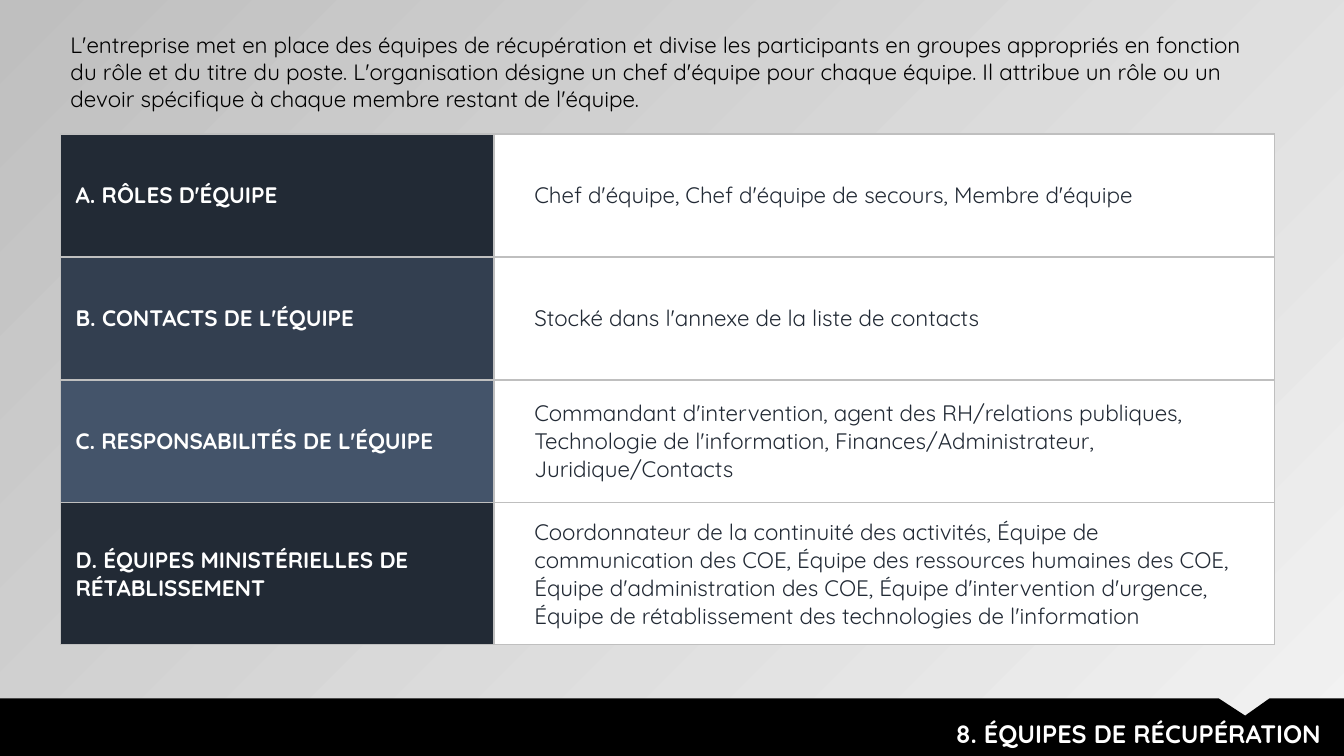
from dataclasses import dataclass

from lxml import etree
from pptx import Presentation
from pptx import util as u
from pptx.dml.color import RGBColor
from pptx.enum import text
from pptx.oxml import ns

TITLE = "8. ÉQUIPES DE RÉCUPÉRATION"
INTRO = (
    "L'entreprise met en place des équipes de récupération et divise les participants "
    "en groupes appropriés en fonction du rôle et du titre du poste. L'organisation "
    "désigne un chef d'équipe pour chaque équipe. Il attribue un rôle ou un devoir "
    "spécifique à chaque membre restant de l'équipe."
)
TEAMS = [
    ("A. RÔLES D'ÉQUIPE",
     "Chef d'équipe, Chef d'équipe de secours, Membre d'équipe"),
    ("B. CONTACTS DE L'ÉQUIPE",
     "Stocké dans l'annexe de la liste de contacts"),
    ("C. RESPONSABILITÉS DE L'ÉQUIPE",
     "Commandant d'intervention, agent des RH/relations publiques, Technologie de "
     "l'information, Finances/Administrateur, Juridique/Contacts"),
    ("D. ÉQUIPES MINISTÉRIELLES DE RÉTABLISSEMENT",
     "Coordonnateur de la continuité des activités, Équipe de communication des COE, "
     "Équipe des ressources humaines des COE, Équipe d'administration des COE, "
     "Équipe d'intervention d'urgence, Équipe de rétablissement des technologies de "
     "l'information"),
]


@dataclass(frozen=True)
class Theme:
    font: str = "Quicksand"
    body: int = 16
    title: int = 18
    white: str = "FFFFFF"
    black: str = "000000"
    ink: str = "222A35"
    border: str = "BFBFBF"
    labels: tuple = ("222A35", "333F50", "44546A")
    backdrop: tuple = ("F2F2F2", "BFBFBF")


THEME = Theme()
WIDTH, HEIGHT = 13.33, 7.5
MARGIN, TABLE_TOP = 0.6, 1.33
COLUMNS = (4.3, 7.74)
ROW_HEIGHT = 1.22
BAR_TOP = 6.93
NOTCH = [(12.09, BAR_TOP), (12.35, 7.1), (12.59, BAR_TOP)]
PADDING, INDENT = 0.15, 0.4


def apply(target, values):
    for name, value in values.items():
        setattr(target, name, value)


def paint(fill, color):
    fill.solid()
    fill.fore_color.rgb = RGBColor.from_string(color)


def write(frame, words, color, size=THEME.body, bold=False,
          align=text.PP_ALIGN.LEFT):
    para = frame.paragraphs[0]
    para.alignment = align
    span = para.add_run()
    span.text = words
    apply(span.font, {"name": THEME.font, "size": u.Pt(size), "bold": bold})
    span.font.color.rgb = RGBColor.from_string(color)


def place(box, left, top, width, height):
    apply(box, {"left": u.Inches(left), "top": u.Inches(top),
                "width": u.Inches(width), "height": u.Inches(height)})
    apply(box.text_frame, {"word_wrap": True,
                           "auto_size": text.MSO_AUTO_SIZE.SHAPE_TO_FIT_TEXT,
                           "vertical_anchor": text.MSO_ANCHOR.TOP})


def outline(cell):
    props = cell._tc.get_or_add_tcPr()
    for index, side in enumerate(("lnL", "lnR", "lnT", "lnB")):
        line = etree.Element(ns.qn(f"a:{side}"), w=str(u.Pt(1)))
        fill = etree.SubElement(line, ns.qn("a:solidFill"))
        etree.SubElement(fill, ns.qn("a:srgbClr"), val=THEME.border)
        props.insert(index, line)


def fill_cell(cell, words, fill, color, left, bold):
    apply(cell, {"vertical_anchor": text.MSO_ANCHOR.MIDDLE,
                 "margin_left": u.Inches(left),
                 "margin_right": u.Inches(PADDING),
                 "margin_top": u.Inches(PADDING),
                 "margin_bottom": u.Inches(PADDING)})
    paint(cell.fill, fill)
    outline(cell)
    write(cell.text_frame, words, color, bold=bold)


def add_backdrop(page):
    fill = page.background.fill
    fill.gradient()
    fill.gradient_angle = 135
    for position, (stop, color) in enumerate(zip(fill.gradient_stops, THEME.backdrop)):
        stop.position = position
        stop.color.rgb = RGBColor.from_string(color)


def add_teams(page):
    table = page.shapes.add_table(
        len(TEAMS), len(COLUMNS), u.Inches(MARGIN), u.Inches(TABLE_TOP),
        u.Inches(sum(COLUMNS)), u.Inches(ROW_HEIGHT * len(TEAMS))).table
    apply(table, {"first_row": False, "horz_banding": False})
    for column, width in zip(table.columns, COLUMNS):
        column.width = u.Inches(width)
    for index, (label, details) in enumerate(TEAMS):
        shade = THEME.labels[index % len(THEME.labels)]
        fill_cell(table.cell(index, 0), label, shade, THEME.white, PADDING, True)
        fill_cell(table.cell(index, 1), details, THEME.white, THEME.ink, INDENT, False)


def add_bar(page):
    corners = NOTCH + [(WIDTH, BAR_TOP), (WIDTH, HEIGHT), (0, HEIGHT)]
    builder = page.shapes.build_freeform(0, u.Inches(BAR_TOP))
    builder.add_line_segments([(u.Inches(x), u.Inches(y)) for x, y in corners])
    bar = builder.convert_to_shape()
    bar.shadow.inherit = False
    paint(bar.fill, THEME.black)
    bar.line.fill.background()


def add_title(page):
    title = page.shapes.title
    place(title, 4.14, 7.08, 9.06, 0.4)
    write(title.text_frame, TITLE, THEME.white, THEME.title, True, text.PP_ALIGN.RIGHT)
    page.shapes._spTree.append(title._element)


def add_intro(page):
    box = page.shapes.add_textbox(0, 0, 0, 0)
    place(box, MARGIN, 0.26, sum(COLUMNS), 0.91)
    write(box.text_frame, INTRO, THEME.black)


def main():
    deck = Presentation()
    apply(deck, {"slide_width": u.Inches(WIDTH), "slide_height": u.Inches(HEIGHT)})
    page = deck.slides.add_slide(deck.slide_layouts.get_by_name("Title Only"))
    for add_part in (add_backdrop, add_teams, add_bar, add_title, add_intro):
        add_part(page)
    deck.save("out.pptx")


if __name__ == "__main__":
    main()
